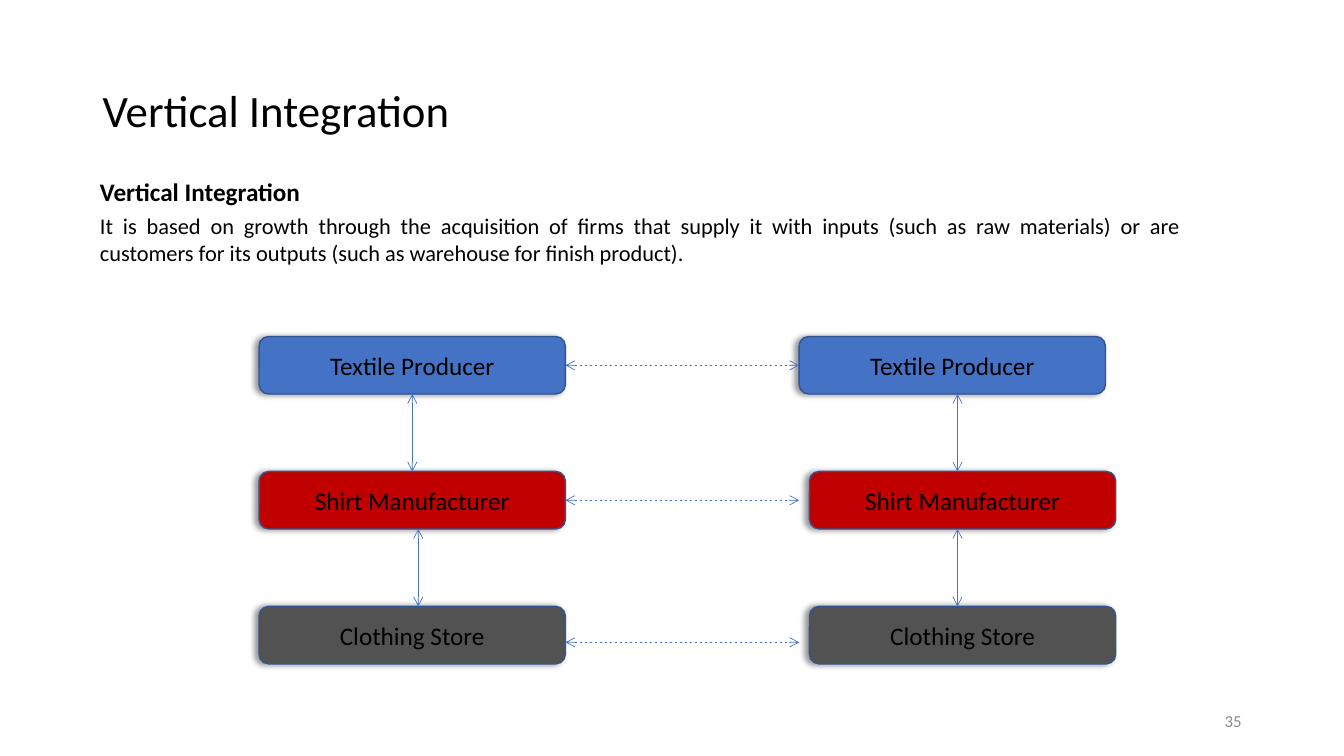
from dataclasses import dataclass
from typing import Optional

from lxml.etree import SubElement
from pptx import Presentation
from pptx.dml.color import RGBColor
from pptx.enum.dml import MSO_LINE as Dash
from pptx.enum.shapes import MSO_CONNECTOR as Link, MSO_SHAPE as Form
from pptx.enum.text import MSO_ANCHOR as Anchor, MSO_AUTO_SIZE as Fit, PP_ALIGN as Align
from pptx.oxml.ns import qn
from pptx.util import Cm, Pt

BLACK = RGBColor(0x00, 0x00, 0x00)
GREY = RGBColor(0x8C, 0x8C, 0x8C)
BLUE = RGBColor(0x44, 0x72, 0xC4)
NAVY = RGBColor(0x32, 0x54, 0x91)
RED = RGBColor(0xC0, 0x00, 0x00)
DARK = RGBColor(0x52, 0x52, 0x52)

WIDE, HIGH = 7.72, 1.45
LEFT, RIGHT, SHIFT = 6.53, 20.14, 0.26
TOP, STEP = 8.48, 3.4
EDGE = LEFT + WIDE
MID = LEFT + WIDE / 2
AXIS = 24.13


@dataclass
class Stage:
    text: str
    fill: RGBColor
    right: float


@dataclass
class Note:
    text: str
    left: float
    top: float
    width: float
    height: float
    size: float
    color: RGBColor = BLACK
    bold: bool = False
    align: Align = Align.LEFT
    anchor: Anchor = Anchor.TOP
    wrap: bool = True


@dataclass
class Arrow:
    x1: float
    y1: float
    x2: float
    y2: float
    dashed: bool = False
    start: Optional[tuple] = None
    end: Optional[tuple] = None


def write(frame, text: str, size: float, color: RGBColor, align: Align,
          anchor: Anchor, bold: bool = False) -> None:
    frame.text = text
    frame.vertical_anchor = anchor
    para = frame.paragraphs[0]
    para.alignment = align
    font = para.runs[0].font
    font.name, font.size, font.bold = "Calibri", Pt(size), bold
    font.color.rgb = color


def add_note(slide, note: Note) -> None:
    box = slide.shapes.add_textbox(
        Cm(note.left), Cm(note.top), Cm(note.width), Cm(note.height))
    box.text_frame.word_wrap = note.wrap
    write(box.text_frame, note.text, note.size, note.color, note.align,
          note.anchor, note.bold)


def add_stage(slide, stage: Stage, left: float, top: float):
    box = slide.shapes.add_shape(
        Form.ROUNDED_RECTANGLE, Cm(left), Cm(top), Cm(WIDE), Cm(HIGH))
    box.fill.solid()
    box.fill.fore_color.rgb = stage.fill
    box.line.color.rgb = NAVY
    box.line.width = Pt(1)
    box.shadow.inherit = False
    glow = box._element.spPr.find(qn("a:effectLst"))
    shade = SubElement(glow, qn("a:outerShdw"), blurRad=str(Pt(4)),
                       dist=str(Pt(3)), dir="10800000", algn="r", rotWithShape="0")
    tint = SubElement(shade, qn("a:srgbClr"), val=str(BLACK))
    SubElement(tint, qn("a:alpha"), val="40000")
    write(box.text_frame, stage.text, 18, BLACK, Align.CENTER, Anchor.MIDDLE)
    return box


def add_arrow(slide, arrow: Arrow) -> None:
    link = slide.shapes.add_connector(
        Link.STRAIGHT, Cm(arrow.x1), Cm(arrow.y1), Cm(arrow.x2), Cm(arrow.y2))
    if arrow.start:
        link.begin_connect(*arrow.start)
    if arrow.end:
        link.end_connect(*arrow.end)
    link.line.color.rgb = BLUE
    link.line.width = Pt(0.5)
    if arrow.dashed:
        link.line.dash_style = Dash.DASH
    line = link.line._get_or_add_ln()
    for tip in ("a:headEnd", "a:tailEnd"):
        SubElement(line, qn(tip), type="arrow")
    SubElement(link._element.spPr, qn("a:effectLst"))


def main() -> None:
    deck = Presentation()
    deck.slide_width, deck.slide_height = Cm(33.87), Cm(19.05)
    slide = deck.slides.add_slide(deck.slide_layouts[5])

    title = slide.shapes.title
    title.left, title.top = Cm(2.33), Cm(1.01)
    title.width, title.height = Cm(29.21), Cm(3.68)
    write(title.text_frame, "Vertical Integration", 32, BLACK, Align.LEFT, Anchor.MIDDLE)
    title.text_frame.auto_size = Fit.NONE
    title.text_frame.paragraphs[0].line_spacing = 0.9

    notes = [
        Note("35", 23.92, 17.66, 7.62, 1.01, 12, GREY,
             align=Align.RIGHT, anchor=Anchor.MIDDLE),
        Note("Vertical Integration", 2.27, 4.32, 5.58, 1.02, 18, bold=True, wrap=False),
        Note("It is based on growth through the acquisition of firms that supply it "
             "with inputs (such as raw materials) or are customers for its outputs "
             "(such as warehouse for finish product).",
             2.27, 5.23, 27.74, 1.62, 16, align=Align.JUSTIFY),
    ]
    for note in notes:
        add_note(slide, note)

    stages = [
        Stage("Textile Producer", BLUE, RIGHT),
        Stage("Shirt Manufacturer", RED, RIGHT + SHIFT),
        Stage("Clothing Store", DARK, RIGHT + SHIFT),
    ]
    tops = [TOP + STEP * row for row in range(len(stages))]
    pairs = [[add_stage(slide, stage, left, top) for left in (LEFT, stage.right)]
             for stage, top in zip(stages, tops)]
    (mill, rival), (maker, _), _ = pairs

    mids = [top + HIGH / 2 for top in tops]
    low = mids[2] + 0.18
    ends = [top + HIGH for top in tops]
    arrows = [
        Arrow(EDGE, mids[0], RIGHT, mids[0], True, (mill, 3), (rival, 1)),
        Arrow(EDGE, mids[1], RIGHT, mids[1], True, (maker, 3)),
        Arrow(EDGE, low, RIGHT, low, True),
        Arrow(MID, ends[0], MID, tops[1], False, (mill, 2), (maker, 0)),
        Arrow(AXIS, ends[0], AXIS, tops[1]),
        Arrow(MID + 0.15, ends[1], MID + 0.15, tops[2]),
        Arrow(AXIS, ends[1], AXIS, tops[2]),
    ]
    for arrow in arrows:
        add_arrow(slide, arrow)

    deck.save("out.pptx")


if __name__ == "__main__":
    main()
